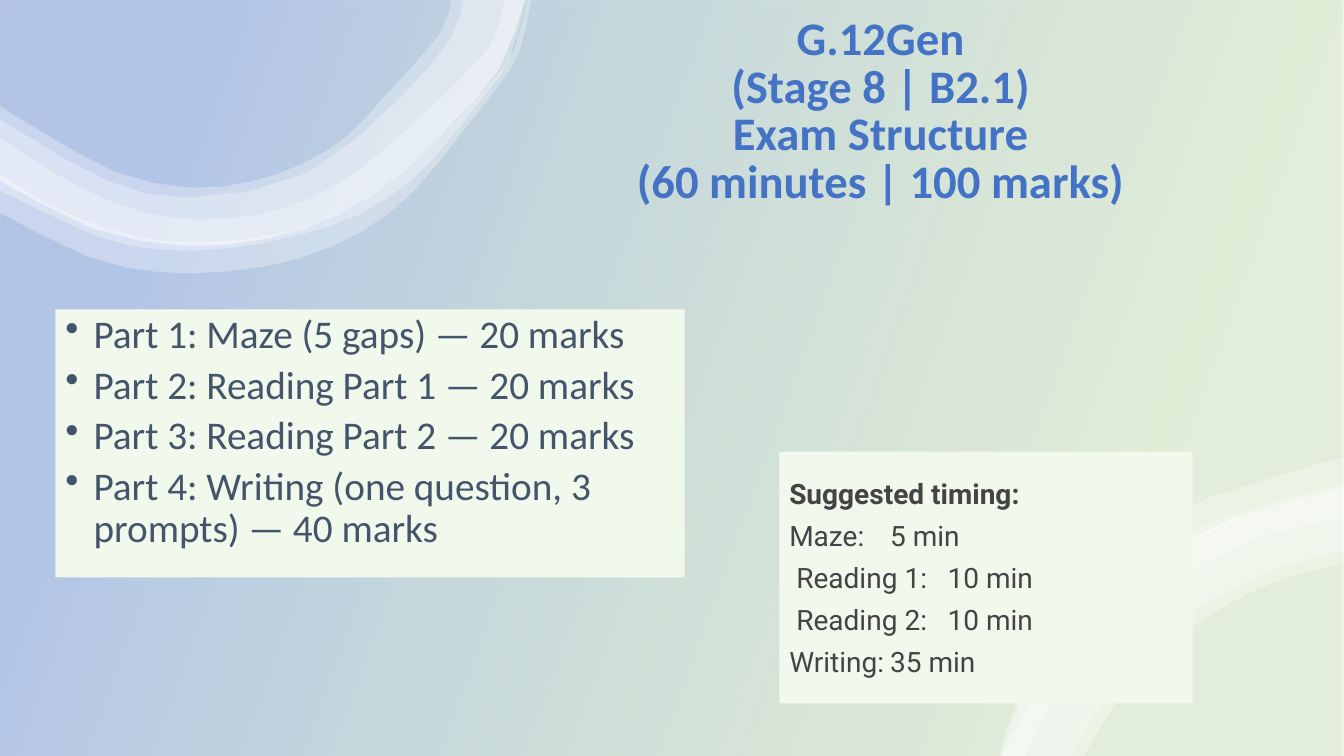
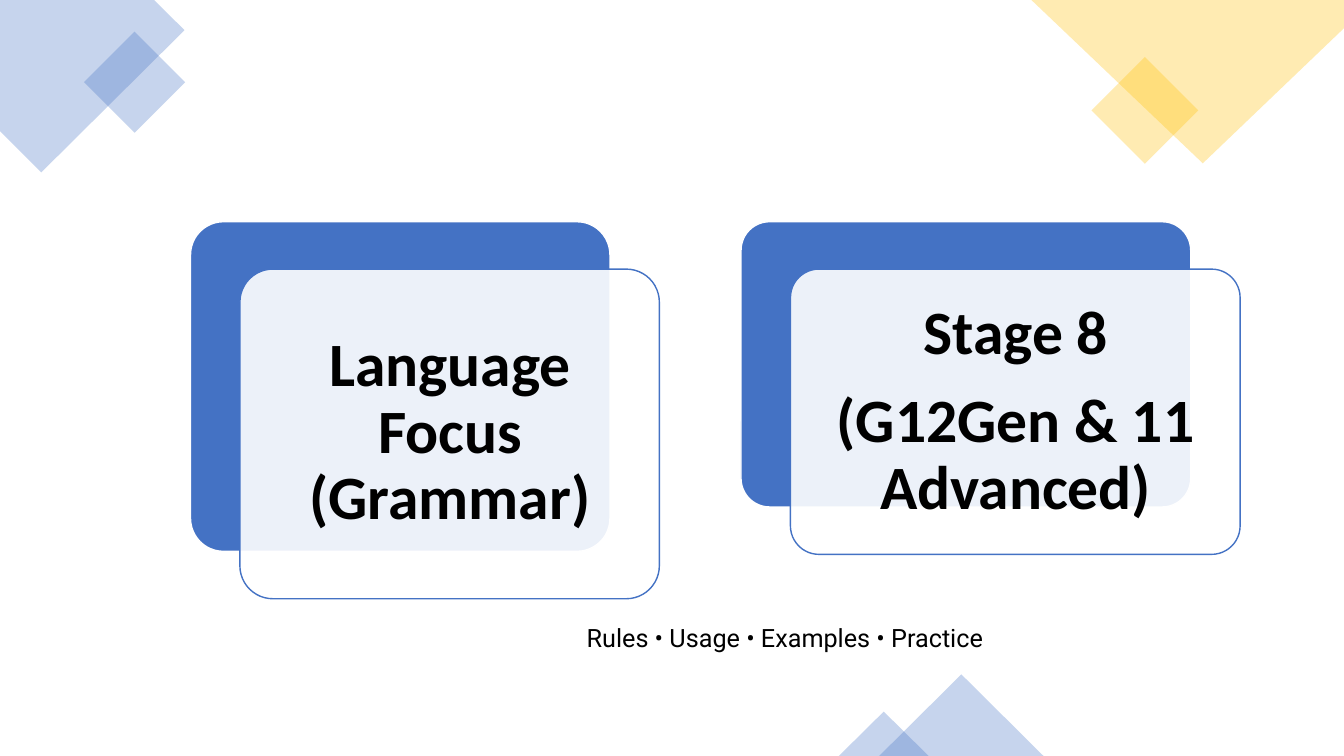
import pptx
import pptx.util
import pptx.dml.color
import pptx.enum.shapes
import pptx.enum.text
import pptx.oxml.ns
from lxml import etree

Inches, Pt = pptx.util.Inches, pptx.util.Pt
SHAPE = pptx.enum.shapes.MSO_SHAPE
ALIGN = pptx.enum.text.PP_ALIGN
ANCHOR = pptx.enum.text.MSO_ANCHOR
qn = pptx.oxml.ns.qn

# Shared look
BLUE, GREEN, GOLD = "4472C4", "70AD47", "FFC000"
WHITE, BLACK, PANEL = "FFFFFF", "000000", "F1F8EC"
SLATE, GREY = "44546A", "444444"
BODY, NOTE = "Calibri", "Roboto"
WIDTH, HEIGHT = 13.33, 7.5
VEIL = 30

# Exam structure content
EXAM_TITLE = ["G.12Gen", "(Stage 8 | B2.1)", "Exam Structure", "(60 minutes | 100 marks)"]
EXAM_PARTS = [
    "Part 1: Maze (5 gaps) — 20 marks",
    "Part 2: Reading Part 1 — 20 marks",
    "Part 3: Reading Part 2 — 20 marks",
    "Part 4: Writing (one question, 3 prompts) — 40 marks",
]
TIMING_HEADING = "Suggested timing:"
TIMINGS = [  # task, time, left indent
    ("Maze:", "5 min", 0),
    ("Reading 1:", "10 min", 0.07),
    ("Reading 2:", "10 min", 0.07),
    ("Writing:", "35 min", 0),
]

# Ribbons: points along one edge, then back along the other
TOP_OUTER = [(-0.02, 1.78), (0.93, 2.27), (1.87, 2.44), (2.69, 2.36),
             (3.37, 2.12), (3.95, 1.75), (4.45, 1.26), (4.95, 0.69), (5.21, -0.01)]
BOTTOM_OUTER = [(9.94, 7.5), (10.52, 6.4), (11.26, 5.69), (12.19, 5.16), (13.34, 4.84)]
RIBBONS = [
    ([(5.23, -0.01), (5.1, 0.5), (4.85, 0.84), (4.45, 1.27), (3.92, 1.77), (3.43, 2.09),
      (2.86, 2.3), (2.25, 2.39), (1.62, 2.39), (1.03, 2.26), (0.48, 2.02), (-0.02, 1.72)],
     [(-0.02, 2.1), (0.88, 2.55), (1.58, 2.7), (2.29, 2.69), (2.98, 2.56),
      (3.6, 2.29), (4.1, 1.9), (4.57, 1.33), (4.92, 0.88), (5.15, 0.52), (5.27, -0.01)]),
    ([(5.02, -0.01), (4.89, 0.4), (4.74, 0.6), (4.35, 0.99), (3.76, 1.53), (3.32, 1.84),
      (2.82, 2.07), (2.25, 2.17), (1.67, 2.16), (1.13, 2.01), (0.63, 1.77), (-0.02, 1.36)],
     [(-0.02, 1.88), (0.95, 2.34), (1.61, 2.48), (2.29, 2.46), (2.94, 2.34),
      (3.56, 2.13), (4.08, 1.79), (4.48, 1.36), (4.81, 0.94), (5.05, 0.6), (5.22, -0.01)]),
    ([(4.6, -0.01), (4.47, 0.38), (3.95, 0.99), (3.02, 1.73),
      (1.87, 1.96), (1.08, 1.8), (0.29, 1.36), (-0.02, 1.17)], TOP_OUTER),
    ([(4.48, -0.01), (4.36, 0.34), (3.84, 0.93), (3.43, 1.36), (2.99, 1.63),
      (2.45, 1.81), (1.87, 1.86), (1.15, 1.71), (0.37, 1.28), (-0.02, 1.04)], TOP_OUTER),
    ([(9.91, 7.5), (10.07, 7), (10.39, 6.38), (10.81, 5.82), (11.34, 5.34),
      (11.95, 4.95), (13.34, 4.53)],
     [(13.34, 4.85), (12.74, 4.99), (12.11, 5.24), (11.52, 5.57), (10.99, 5.98),
      (10.53, 6.47), (10.16, 7.03), (9.97, 7.5)]),
    (BOTTOM_OUTER,
     [(13.34, 5.59), (12.71, 5.75), (12.14, 6.02), (11.62, 6.37), (11.2, 6.77),
      (10.75, 7.5)]),
    ([(9.93, 7.5), (10.12, 6.96), (10.46, 6.4), (10.93, 5.9), (11.46, 5.49),
      (12.06, 5.16), (13.34, 4.8)],
     [(13.34, 5.13), (12.81, 5.24), (12.21, 5.46), (11.14, 6.12), (10.71, 6.57),
      (10.36, 7.08), (10.17, 7.5)]),
    (BOTTOM_OUTER,
     [(13.34, 5.46), (12.66, 5.64), (12.08, 5.92), (11.54, 6.27), (11.1, 6.71),
      (10.62, 7.5)]),
]

# Language focus content
CARDS = [  # left, width, height, text box, paragraphs
    (1.89, 4.16, 3.27, (2.48, 2.76, 3.97, 3.08), ["Language Focus (Grammar)"]),
    (7.35, 4.46, 2.83, (7.93, 2.75, 4.29, 2.67), ["Stage 8", "(G12Gen & 11 Advanced)"]),
]
CARD_TOP, CARD_SHIFT_X, CARD_SHIFT_Y = 2.2, 0.49, 0.47
FOCUS_LINE = "Rules • Usage • Examples • Practice"
CORNERS = [  # colour, outline
    (BLUE, [(1.53, 0), (0, 0), (0, 1.3), (0.41, 1.71), (1.83, 0.3)]),
    (GOLD, [(13.33, 0), (10.23, 0), (11.93, 1.62), (13.33, 0.28)]),
]
DECOR = [  # preset, colour, box, rotation
    (SHAPE.RECTANGLE, BLUE, (0.98, 0.46, 0.71, 0.71), 315),
    (SHAPE.RECTANGLE, GOLD, (10.98, 0.72, 0.75, 0.75), 315),
    (SHAPE.ISOSCELES_TRIANGLE, BLUE, (8.72, 6.69, 1.63, 0.81), 0),
    (SHAPE.ISOSCELES_TRIANGLE, BLUE, (8.32, 7.06, 0.89, 0.44), 0),
]


def rgb(value):
    return pptx.dml.color.RGBColor.from_string(value)


def set_alpha(colour_node, percent):
    etree.SubElement(colour_node, qn("a:alpha")).set("val", str(percent * 1000))


def paint(shape, colour, opacity=100, line=None):
    shape.shadow.inherit = False
    shape.fill.solid()
    shape.fill.fore_color.rgb = rgb(colour)
    if opacity < 100:
        set_alpha(shape.element.spPr.find(qn("a:solidFill"))[0], opacity)
    if line:
        shape.line.color.rgb = rgb(line)
        shape.line.width = Pt(1)
    else:
        shape.line.fill.background()
    return shape


def add_block(slide, preset, box, colour, **look):
    return paint(slide.shapes.add_shape(preset, *map(Inches, box)), colour, **look)


def add_outline(slide, points, colour):
    (x, y), *rest = [(Inches(px), Inches(py)) for px, py in points]
    builder = slide.shapes.build_freeform(x, y)
    builder.add_line_segments(rest, close=True)
    return paint(builder.convert_to_shape(), colour, VEIL)


def smooth(points):
    """Add one Catmull-Rom midpoint between each pair of points."""
    padded = [points[0], *points, points[-1]]
    curve = []
    for a, b, c, d in zip(padded, padded[1:], padded[2:], padded[3:]):
        middle = tuple((9 * (q + r) - p - s) / 16 for p, q, r, s in zip(a, b, c, d))
        curve += [b, middle]
    return curve + [points[-1]]


def set_frame(shape, anchor, inset=None):
    frame = shape.text_frame
    frame.word_wrap = True
    frame.auto_size = pptx.enum.text.MSO_AUTO_SIZE.NONE
    frame.vertical_anchor = anchor
    if inset:
        frame.margin_left = frame.margin_right = Inches(inset)
        frame.margin_top = frame.margin_bottom = Inches(inset)
    return frame


def add_paragraph(frame, text, size, font, colour, bold=False, align=ALIGN.LEFT,
                  spacing=1.0, after=0, margin=0, hanging=0, bullet=None, tab=None):
    first = frame.paragraphs[0]
    paragraph = frame.add_paragraph() if first.runs else first
    props = paragraph._p.get_or_add_pPr()
    props.set("marL", str(Inches(margin)))
    props.set("indent", str(-Inches(hanging)))
    paragraph.alignment = align
    paragraph.line_spacing = spacing
    paragraph.space_before = Pt(0)
    paragraph.space_after = Pt(after)
    if bullet:
        etree.SubElement(props, qn("a:buChar")).set("char", bullet)
    if tab:
        stop = etree.SubElement(etree.SubElement(props, qn("a:tabLst")), qn("a:tab"))
        stop.set("pos", str(Inches(tab)))
        stop.set("algn", "r")
    run = paragraph.add_run()
    run.text = text
    run.font.size, run.font.name, run.font.bold = Pt(size), font, bold
    run.font.color.rgb = rgb(colour)


def place_title(slide, box):
    """Move the title placeholder and bring it in front of the shapes so far."""
    title = slide.shapes.title
    title.left, title.top, title.width, title.height = map(Inches, box)
    title.element.getparent().append(title.element)
    return title


def build_exam_slide(slide):
    # Gradient background and ribbons
    backdrop = add_block(slide, SHAPE.RECTANGLE, (0, 0, WIDTH, HEIGHT), WHITE)
    backdrop.fill.gradient()
    backdrop.fill.gradient_angle = 160
    stops = [(0.16, GREEN, 20), (0.85, BLUE, 40)]
    for stop, (position, colour, _) in zip(backdrop.fill.gradient_stops, stops):
        stop.position = position
        stop.color.rgb = rgb(colour)
    for node, (_, _, opacity) in zip(backdrop.element.iter(qn("a:gs")), stops):
        set_alpha(node[0], opacity)
    for edge, back in RIBBONS:
        add_outline(slide, smooth(edge) + smooth(back), WHITE)

    # Title
    frame = set_frame(place_title(slide, (5.03, 0.14, 7.41, 2.01)), ANCHOR.MIDDLE)
    for line in EXAM_TITLE:
        add_paragraph(frame, line, 33.3, BODY, BLUE, bold=True, align=ALIGN.CENTER,
                      spacing=0.7, after=6)

    # Exam parts
    panel = add_block(slide, SHAPE.RECTANGLE, (0.55, 3.07, 6.24, 2.66), PANEL)
    frame = set_frame(panel, ANCHOR.TOP)
    for part in EXAM_PARTS:
        add_paragraph(frame, part, 28, BODY, SLATE, spacing=0.9, after=6,
                      margin=0.28, hanging=0.28, bullet="•")

    # Suggested timing
    panel = add_block(slide, SHAPE.RECTANGLE, (7.73, 4.48, 4.1, 2.5), PANEL)
    frame = set_frame(panel, ANCHOR.MIDDLE)
    add_paragraph(frame, TIMING_HEADING, 20, NOTE, GREY, bold=True, after=6)
    for task, time, indent in TIMINGS:
        add_paragraph(frame, f"{task}\t{time}", 20, NOTE, GREY, after=6,
                      margin=indent, tab=2.28)


def build_focus_slide(slide):
    # Corner decoration
    for colour, outline in CORNERS:
        add_outline(slide, outline, colour)
    for preset, colour, box, rotation in DECOR:
        add_block(slide, preset, box, colour, opacity=VEIL).rotation = rotation

    # Layered cards; the first one carries the title
    for number, (left, width, height, text_box, lines) in enumerate(CARDS):
        back = add_block(slide, SHAPE.ROUNDED_RECTANGLE, (left, CARD_TOP, width, height),
                         BLUE, line=WHITE)
        front = add_block(slide, SHAPE.ROUNDED_RECTANGLE,
                          (left + CARD_SHIFT_X, CARD_TOP + CARD_SHIFT_Y, width, height),
                          WHITE, opacity=90, line=BLUE)
        back.adjustments[0] = front.adjustments[0] = 0.1
        if number == 0:
            label = place_title(slide, text_box)
        else:
            label = slide.shapes.add_textbox(*map(Inches, text_box))
        frame = set_frame(label, ANCHOR.MIDDLE, inset=0.18)
        for line in lines:
            add_paragraph(frame, line, 44, BODY, BLACK, bold=True, align=ALIGN.CENTER,
                          spacing=0.9, after=15.4)

    # Summary line
    summary = slide.shapes.add_textbox(*map(Inches, (5.72, 6.12, 6.67, 0.4)))
    add_paragraph(set_frame(summary, ANCHOR.TOP), FOCUS_LINE, 18, NOTE, BLACK)


def main():
    deck = pptx.Presentation()
    deck.slide_width, deck.slide_height = Inches(WIDTH), Inches(HEIGHT)
    title_only = deck.slide_layouts[5]
    for build in (build_exam_slide, build_focus_slide):
        build(deck.slides.add_slide(title_only))
    deck.save("out.pptx")


if __name__ == "__main__":
    main()
